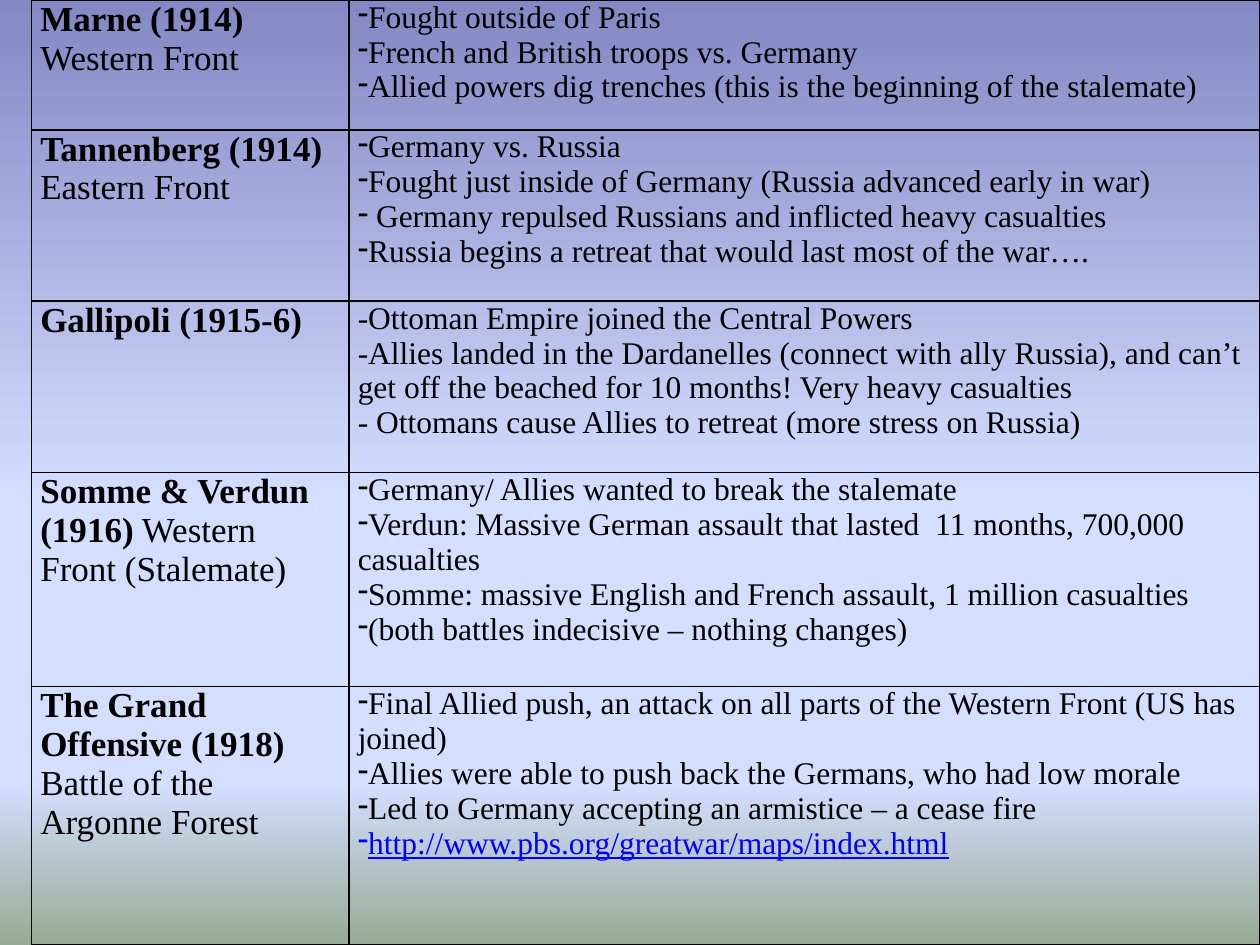
import pptx
import pptx.util
import pptx.dml.color
import pptx.oxml
import pptx.oxml.ns
from lxml import etree

FONT = "Times New Roman"
INK, LINK = "000000", "0000FF"
SKY = [(0, "8488C4"), (53, "D4DEFF"), (83, "D4DEFF"), (100, "96AB94")]
COLS = [2.52, 7.23]
ROWS = [1.03, 1.36, 1.36, 1.7, 2.05]
URL = "http://www.pbs.org/greatwar/maps/index.html"

BATTLES = [
    ([[("Marne (1914)", True), (" Western Front", False)]], True,
     ["Fought outside of Paris",
      "French and British troops vs. Germany",
      "Allied powers dig trenches (this is the beginning of the stalemate)"]),
    ([[("Tannenberg (1914)", True)], [("Eastern Front", False)]], True,
     ["Germany vs. Russia",
      "Fought just inside of Germany (Russia advanced early in war)",
      " Germany repulsed Russians and inflicted heavy casualties",
      "Russia begins a retreat that would last most of the war…."]),
    ([[("Gallipoli (1915-6)", True)]], False,
     ["-Ottoman Empire joined the Central Powers",
      "-Allies landed in the Dardanelles (connect with ally Russia), and can’t "
      "get off the beached for 10 months! Very heavy casualties",
      "- Ottomans cause Allies to retreat (more stress on Russia)"]),
    ([[("Somme & Verdun (1916)", True), (" Western Front (Stalemate)", False)]], True,
     ["Germany/ Allies wanted to break the stalemate",
      "Verdun: Massive German assault that lasted  11 months, 700,000 casualties",
      "Somme: massive English and French assault, 1 million casualties",
      "(both battles indecisive – nothing changes)"]),
    ([[("The Grand Offensive (1918) ", True), ("Battle of the Argonne Forest", False)]], True,
     ["Final Allied push, an attack on all parts of the Western Front (US has joined)",
      "Allies were able to push back the Germans, who had low morale",
      "Led to Germany accepting an armistice – a cease fire",
      URL]),
]


def paint(hue):
    """Turn a hex string into a colour."""
    return pptx.dml.color.RGBColor.from_string(hue)


def node(home, tag, **attrs):
    """Add a drawing element under home."""
    item = etree.SubElement(home, pptx.oxml.ns.qn("a:" + tag))
    for key, value in attrs.items():
        item.set(key, str(value))
    return item


def shade(slide, stops):
    """Fill the slide background with a downward gradient."""
    fill = slide.background.fill
    fill.gradient()
    grad = next(slide.element.iter(pptx.oxml.ns.qn("a:gradFill")))
    for child in list(grad):
        grad.remove(child)
    band = node(grad, "gsLst")
    for spot, hue in stops:
        node(node(band, "gs", pos=spot * 1000), "srgbClr", val=hue)
    node(grad, "lin", ang=90 * 60000, scaled=0)


def frame(cell):
    """Give a cell clear fill, thin insets and black borders."""
    cell.margin_left = cell.margin_right = pptx.util.Inches(0.07)
    cell.margin_top = cell.margin_bottom = 0
    props = cell._tc.get_or_add_tcPr()
    for side in ("lnL", "lnR", "lnT", "lnB"):
        line = node(props, side, w=pptx.util.Pt(1))
        node(node(line, "solidFill"), "srgbClr", val=INK)
    cell.fill.background()


def write(cell, paras, size, dash=False):
    """Write paragraphs of (text, bold) runs into a cell."""
    text = cell.text_frame
    text.word_wrap = True
    for rank, runs in enumerate(paras):
        para = text.add_paragraph() if rank else text.paragraphs[0]
        if dash:
            props = para._p.get_or_add_pPr()
            props.set("marL", "0")
            props.set("indent", "0")
            node(props, "buFontTx")
            node(props, "buChar", char="-")
        para.font.size = pptx.util.Pt(size)
        for words, bold in runs:
            run = para.add_run()
            run.text = words
            font = run.font
            font.name, font.size, font.bold = FONT, pptx.util.Pt(size), bold
            font.color.rgb = paint(LINK if words == URL else INK)
            if words == URL:
                font.underline = True


def chart(slide, left, top):
    """Place the table of battles with its corner at left, top."""
    size = [pptx.util.Inches(n) for n in (left, top, sum(COLS), sum(ROWS))]
    table = slide.shapes.add_table(len(ROWS), len(COLS), *size).table
    table.first_row = table.horz_banding = False
    for col, wide in zip(table.columns, COLS):
        col.width = pptx.util.Inches(wide)
    for row, high, (name, dash, facts) in zip(table.rows, ROWS, BATTLES):
        row.height = pptx.util.Inches(high)
        head, body = row.cells
        for cell in (head, body):
            frame(cell)
        write(head, name, 20)
        write(body, [[(fact, False)] for fact in facts], 18, dash)


def main():
    """Build and save the slide."""
    deck = pptx.Presentation()
    deck.slide_width = pptx.util.Inches(10)
    deck.slide_height = pptx.util.Inches(7.5)
    slide = deck.slides.add_slide(deck.slide_layouts[6])
    shade(slide, SKY)
    chart(slide, 0.25, 0)
    deck.save("out.pptx")


if __name__ == "__main__":
    main()
